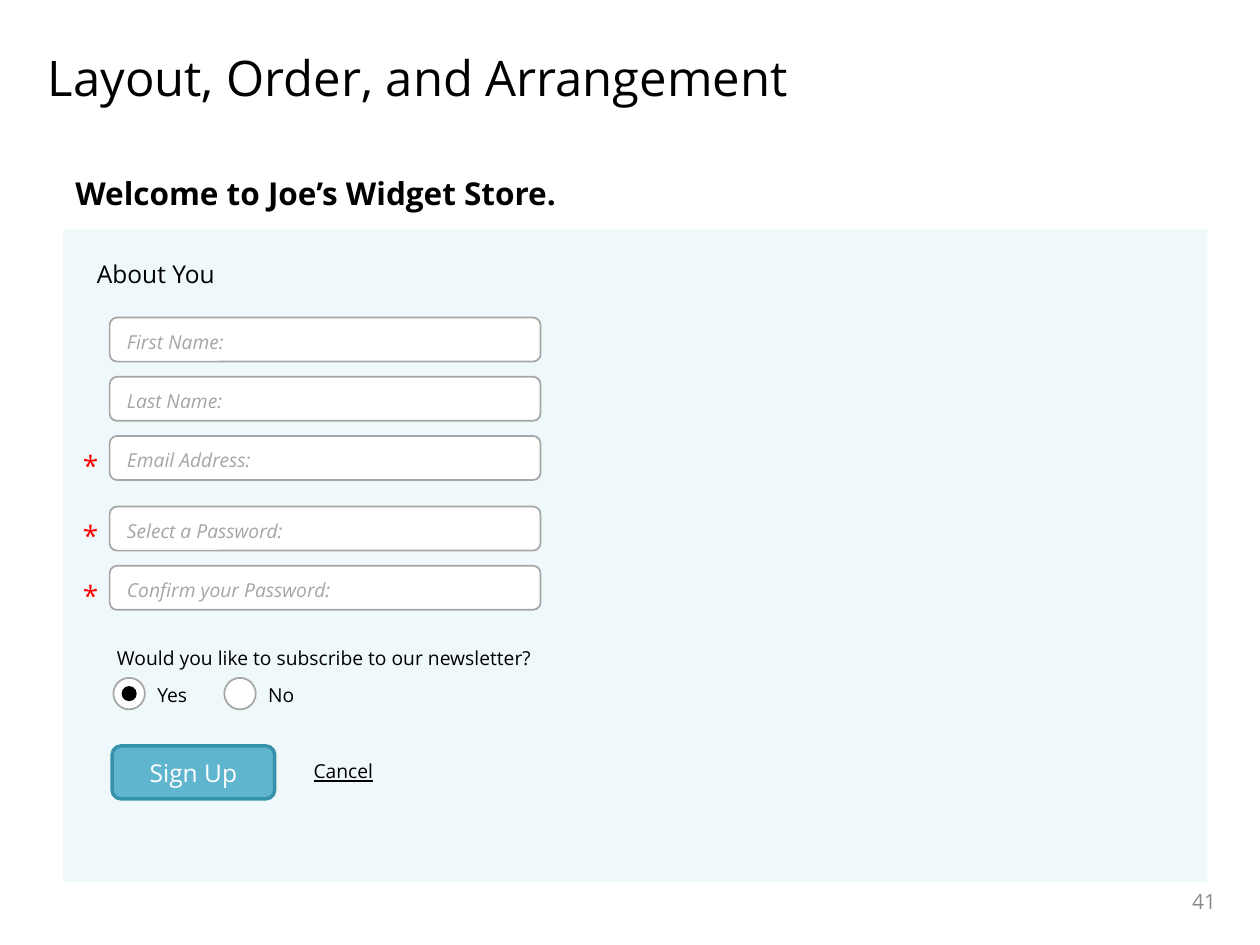
from dataclasses import dataclass

from pptx import Presentation
from pptx.dml.color import RGBColor
from pptx.enum.shapes import MSO_SHAPE as Shape
from pptx.enum.text import MSO_ANCHOR as Anchor, MSO_AUTO_SIZE as AutoSize, PP_ALIGN as Align
from pptx.util import Inches, Pt


@dataclass(frozen=True)
class Theme:
    font: str = "Open Sans"
    ink: str = "000000"
    white: str = "FFFFFF"
    panel: str = "EFF8FA"
    muted: str = "A6A6A6"
    page_number: str = "8C8C8C"
    required: str = "FF0000"
    button: str = "5FB5CD"
    button_edge: str = "3692AB"
    title_size: int = 28
    heading_size: int = 18
    star_size: int = 16
    section_size: int = 14
    number_size: int = 12
    body_size: int = 11


THEME = Theme()
FIELD_WIDTH, FIELD_HEIGHT, FIELD_PITCH = 3.42, 0.35, 0.47
RADIO_SIZE, DOT_SIZE = 0.25, 0.12
# Each group: offset of its first field, then (label, required) pairs
FIELD_GROUPS = [
    (0.70, [("First Name:", False), ("Last Name:", False), ("Email Address:", True)]),
    (2.20, [("Select a Password:", True), ("Confirm your Password:", True)]),
]


def write(shape, text, size=THEME.body_size, color=THEME.ink, bold=False, italic=False,
          underline=False, align=Align.LEFT, anchor=Anchor.TOP):
    frame = shape.text_frame
    frame.word_wrap = True
    frame.vertical_anchor = anchor
    paragraph = frame.paragraphs[0]
    paragraph.alignment = align
    run = paragraph.add_run()
    run.text = text
    font = run.font
    font.name, font.size = THEME.font, Pt(size)
    font.bold, font.italic, font.underline = bold, italic, underline
    font.color.rgb = RGBColor.from_string(color)


def add_text(slide, left, top, width, height, text, **style):
    box = slide.shapes.add_textbox(Inches(left), Inches(top), Inches(width), Inches(height))
    write(box, text, **style)
    return box


def add_box(slide, kind, left, top, width, height, fill, line=None, line_width=1):
    shape = slide.shapes.add_shape(kind, Inches(left), Inches(top), Inches(width), Inches(height))
    shape.shadow.inherit = False
    shape.fill.solid()
    shape.fill.fore_color.rgb = RGBColor.from_string(fill)
    if line:
        shape.line.color.rgb = RGBColor.from_string(line)
        shape.line.width = Pt(line_width)
    else:
        shape.line.fill.background()
    return shape


def place_title(slide, left, top, width, height, text):
    title = slide.shapes.title
    title.left, title.top = Inches(left), Inches(top)
    title.width, title.height = Inches(width), Inches(height)
    title.text_frame.auto_size = AutoSize.NONE
    write(title, text, size=THEME.title_size)


def add_field(slide, left, top, label, required):
    add_box(slide, Shape.ROUNDED_RECTANGLE, left, top, FIELD_WIDTH, FIELD_HEIGHT,
            THEME.white, THEME.muted)
    add_text(slide, left + 0.04, top + 0.05, 1.83, 0.29, label, color=THEME.muted, italic=True)
    if required:
        add_text(slide, left - 0.31, top + 0.05, 0.27, 0.37, "*",
                 size=THEME.star_size, color=THEME.required)


def add_radio(slide, left, top, label, selected=False):
    add_box(slide, Shape.OVAL, left, top, RADIO_SIZE, RADIO_SIZE, THEME.white, THEME.muted)
    if selected:
        inset = (RADIO_SIZE - DOT_SIZE) / 2
        add_box(slide, Shape.OVAL, left + inset, top + inset, DOT_SIZE, DOT_SIZE, THEME.ink)
    add_text(slide, left + RADIO_SIZE, top - 0.01, 0.46, 0.29, label)


def add_newsletter_choice(slide, left, top):
    add_text(slide, left, top, 4.17, 0.29, "Would you like to subscribe to our newsletter?")
    for index, label in enumerate(["Yes", "No"]):
        add_radio(slide, left + 0.07 + 0.88 * index, top + 0.3, label, selected=index == 0)


def add_actions(slide, left, top):
    button = add_box(slide, Shape.ROUNDED_RECTANGLE, left, top, 1.29, 0.42,
                     THEME.button, THEME.button_edge, line_width=2)
    write(button, "Sign Up", size=THEME.section_size, color=THEME.white,
          align=Align.CENTER, anchor=Anchor.MIDDLE)
    add_text(slide, left + 1.5, top + 0.06, 0.77, 0.29, "Cancel", underline=True)


def add_sign_up_form(slide, left, top, width, height):
    add_box(slide, Shape.RECTANGLE, left, top, width, height, THEME.panel)
    add_text(slide, left, top - 0.49, 5.75, 0.4, "Welcome to Joe’s Widget Store.",
             size=THEME.heading_size, bold=True)
    add_text(slide, left + 0.17, top + 0.19, 5.75, 0.34, "About You", size=THEME.section_size)
    for offset, fields in FIELD_GROUPS:
        for row, (label, required) in enumerate(fields):
            add_field(slide, left + 0.37, top + offset + row * FIELD_PITCH, label, required)
    add_newsletter_choice(slide, left + 0.33, top + 3.26)
    add_actions(slide, left + 0.39, top + 4.1)


def main():
    presentation = Presentation()
    presentation.slide_width, presentation.slide_height = Inches(10), Inches(7.5)
    title_only = presentation.slide_layouts[5]
    slide = presentation.slides.add_slide(title_only)
    place_title(slide, 0.28, 0.33, 9.47, 1.08, "Layout, Order, and Arrangement")
    add_sign_up_form(slide, 0.5, 1.82, 9.08, 5.18)
    add_text(slide, 7.42, 6.95, 2.33, 0.4, "41", size=THEME.number_size,
             color=THEME.page_number, align=Align.RIGHT, anchor=Anchor.MIDDLE)
    presentation.save("out.pptx")


if __name__ == "__main__":
    main()
